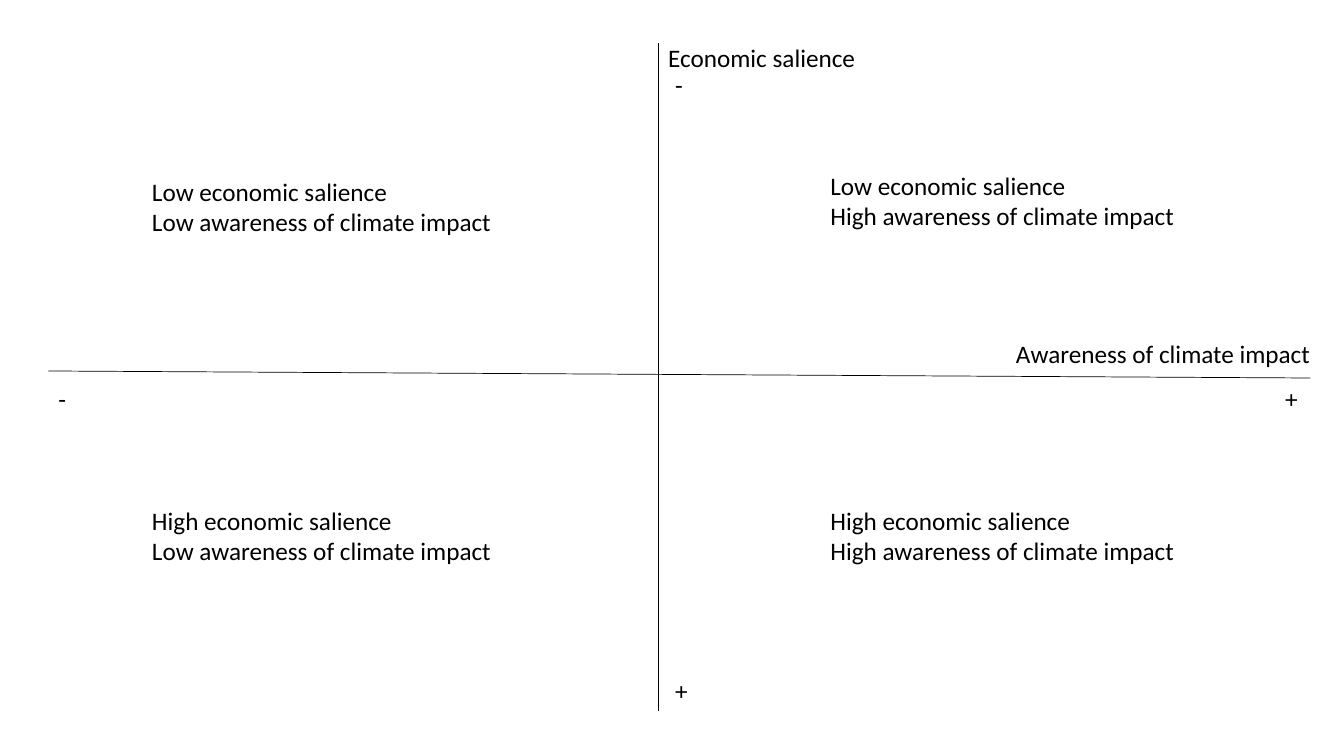
from pptx import Presentation
from pptx.dml.color import RGBColor
from pptx.enum.shapes import MSO_CONNECTOR
from pptx.enum.text import MSO_AUTO_SIZE
from pptx.oxml.ns import qn
from pptx.util import Pt
from lxml.etree import SubElement

COLORS = {"ink": "000000", "background": "FFFFFF"}


class QuadrantSlide:
    """Holds the text and line style together with the current slide."""

    font_name = "Calibri"
    font_size = 18
    line_width = 0.5

    def __init__(self, deck):
        self.page = deck.slides.add_slide(deck.slide_layouts[6])
        fill = self.page.background.fill
        fill.solid()
        fill.fore_color.rgb = self.color("background")

    def color(self, name):
        return RGBColor.from_string(COLORS[name])

    def axis(self, *ends):
        line = self.page.shapes.add_connector(
            MSO_CONNECTOR.STRAIGHT, *[Pt(length) for length in ends])
        line.line.color.rgb = self.color("ink")
        line.line.width = Pt(self.line_width)
        SubElement(line._element.spPr, qn("a:effectLst"))

    def text(self, left, top, width, height, lines, wrap=False):
        box = self.page.shapes.add_textbox(Pt(left), Pt(top), Pt(width), Pt(height))
        frame = box.text_frame
        frame.word_wrap = wrap
        frame.auto_size = MSO_AUTO_SIZE.SHAPE_TO_FIT_TEXT
        for index, line in enumerate(lines):
            para = frame.add_paragraph() if index else frame.paragraphs[0]
            span = para.add_run()
            span.text = line
            span.font.name = self.font_name
            span.font.size = Pt(self.font_size)
            span.font.color.rgb = self.color("ink")


def main():
    deck = Presentation()
    deck.slide_width, deck.slide_height = Pt(960), Pt(540)
    matrix = QuadrantSlide(deck)

    # Axes
    matrix.axis(470.2, 31, 470.2, 507.6)
    matrix.axis(34.6, 265, 936, 270)

    # Axis ends and titles
    label_height = 29
    for left, top, width, label in [
        (475.2, 46.1, 20.3, "-"),
        (475.2, 478.8, 23.6, "+"),
        (910.8, 270, 23.6, "+"),
        (34.6, 270, 20.3, "-"),
        (718.6, 238.3, 226.8, "Awareness of climate impact"),
        (470.2, 26.6, 150.5, "Economic salience"),
    ]:
        matrix.text(left, top, width, label_height, [label])

    # Quadrants: economic salience by row, climate awareness by column
    columns = [("Low", 101.5), ("High", 586.1)]
    rows = [("Low", (122.4, 118.1)), ("High", (357.1, 357.1))]
    for salience, tops in rows:
        for (awareness, left), top in zip(columns, tops):
            matrix.text(left, top, 264.2, 51, [
                f"{salience} economic salience",
                f"{awareness} awareness of climate impact",
            ], wrap=True)

    deck.save("out.pptx")


if __name__ == "__main__":
    main()
